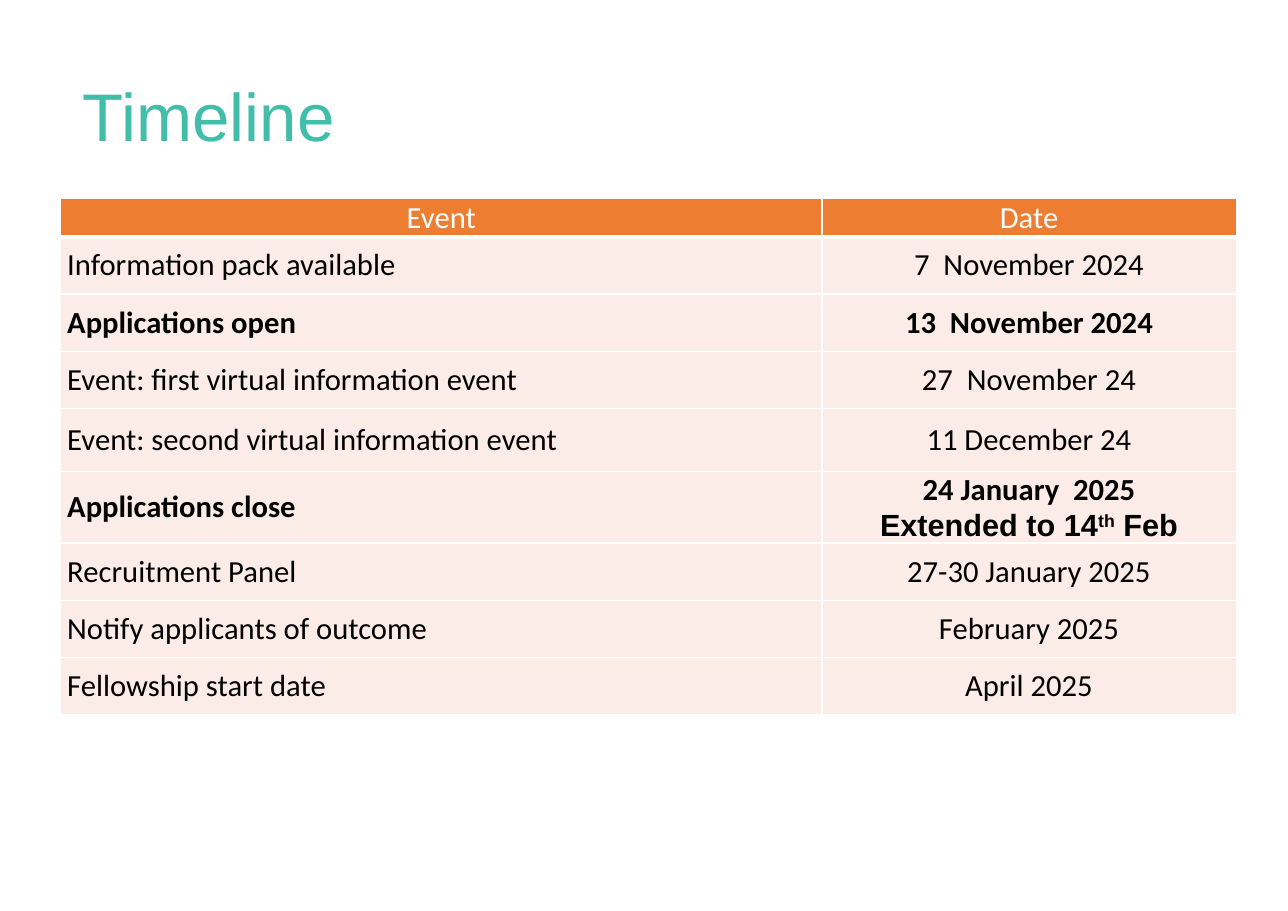
"""Build the Timeline slide: a title above a two-column table of events and dates."""
from lxml import etree
from pptx import Presentation
from pptx.dml.color import RGBColor
from pptx.enum.text import MSO_ANCHOR, MSO_AUTO_SIZE, PP_ALIGN
from pptx.oxml.ns import qn
from pptx.util import Inches, Pt

LEFT, CENTER = PP_ALIGN.LEFT, PP_ALIGN.CENTER
MIDDLE = MSO_ANCHOR.MIDDLE
NO_AUTOFIT = MSO_AUTO_SIZE.NONE

TITLE = "Timeline"
HEADINGS = ("Event", "Date")
EXTENSION = (("Extended to 14", 0), ("th", 30000), (" Feb", 0))
EVENTS = [
    ("Information pack available", "7  November 2024"),
    ("Applications open", "13  November 2024"),
    ("Event: first virtual information event", "27  November 24"),
    ("Event: second virtual information event", "11 December 24"),
    ("Applications close", "24 January  2025"),
    ("Recruitment Panel", "27-30 January 2025"),
    ("Notify applicants of outcome", "February 2025"),
    ("Fellowship start date", "April 2025"),
]
BOLD_EVENTS = {"Applications open", "Applications close"}
EXTENDED_EVENT = "Applications close"

COLORS = {"title": "41BDAA", "header": "ED7D31", "body": "FCECE8",
          "white": "FFFFFF", "text": "000000"}
SLIDE_SIZE = (11.69, 8.27)
TITLE_BOX = (0.64, 0.69, 5.49, 0.79)
TABLE_ORIGIN = (0.55, 1.8)
COLUMN_WIDTHS = (6.91, 3.76)
HEADER_HEIGHT, ROW_HEIGHT = 0.35, 0.52
TALL_ROWS = {4: 0.57, 5: 0.65}
EVENT_INDENT = 0.06


def add_run(paragraph, text, size, color, font="Calibri", bold=False):
    run = paragraph.add_run()
    run.text = text
    run.font.name, run.font.size, run.font.bold = font, Pt(size), bold
    run.font.color.rgb = RGBColor.from_string(COLORS[color])
    return run


def add_borders(cell, bottom_width):
    properties = cell._tc.get_or_add_tcPr()
    for side, width in (("L", 1), ("R", 1), ("T", 1), ("B", bottom_width)):
        line = etree.SubElement(properties, qn(f"a:ln{side}"), w=str(Pt(width)))
        fill = etree.SubElement(line, qn("a:solidFill"))
        etree.SubElement(fill, qn("a:srgbClr"), val=COLORS["white"])


def fill_cell(cell, text, fill, color, alignment, bold=False, indent=0, bottom_width=1):
    cell.margin_left = Inches(indent)
    cell.margin_right = cell.margin_top = cell.margin_bottom = 0
    cell.vertical_anchor = MIDDLE
    add_borders(cell, bottom_width)
    cell.fill.solid()
    cell.fill.fore_color.rgb = RGBColor.from_string(COLORS[fill])
    paragraph = cell.text_frame.paragraphs[0]
    paragraph.alignment = alignment
    add_run(paragraph, text, 20, color, bold=bold)


def add_extension(cell):
    paragraph = cell.text_frame.add_paragraph()
    paragraph.alignment = CENTER
    for text, baseline in EXTENSION:
        run = add_run(paragraph, text, 20, "text", "Arial", True)
        if baseline:
            run.font._element.set("baseline", str(baseline))


def add_title(slide):
    title = slide.shapes.title
    title.left, title.top, title.width, title.height = map(Inches, TITLE_BOX)
    frame = title.text_frame
    frame.word_wrap, frame.auto_size, frame.vertical_anchor = True, NO_AUTOFIT, MIDDLE
    frame.margin_left = frame.margin_right = Inches(0.11)
    frame.margin_top = frame.margin_bottom = Inches(0.06)
    paragraph = frame.paragraphs[0]
    paragraph.alignment, paragraph.line_spacing = LEFT, 0.9
    add_run(paragraph, TITLE, 44, "title", "Arial")


def add_timeline(slide):
    heights = [HEADER_HEIGHT] + [TALL_ROWS.get(row, ROW_HEIGHT)
                                 for row in range(1, len(EVENTS) + 1)]
    box = (*TABLE_ORIGIN, sum(COLUMN_WIDTHS), sum(heights))
    table = slide.shapes.add_table(len(heights), len(COLUMN_WIDTHS),
                                   *map(Inches, box)).table
    for column, width in zip(table.columns, COLUMN_WIDTHS):
        column.width = Inches(width)
    for row, height in zip(table.rows, heights):
        row.height = Inches(height)
    for column, heading in enumerate(HEADINGS):
        fill_cell(table.cell(0, column), heading, "header", "white", CENTER, bottom_width=3)
    for row, (event, date) in enumerate(EVENTS, 1):
        bold = event in BOLD_EVENTS
        fill_cell(table.cell(row, 0), event, "body", "text", LEFT, bold, EVENT_INDENT)
        fill_cell(table.cell(row, 1), date, "body", "text", CENTER, bold)
        if event == EXTENDED_EVENT:
            add_extension(table.cell(row, 1))


def main():
    presentation = Presentation()
    presentation.slide_width, presentation.slide_height = map(Inches, SLIDE_SIZE)
    slide = presentation.slides.add_slide(presentation.slide_layouts[5])
    add_title(slide)
    add_timeline(slide)
    presentation.save("out.pptx")


if __name__ == "__main__":
    main()
